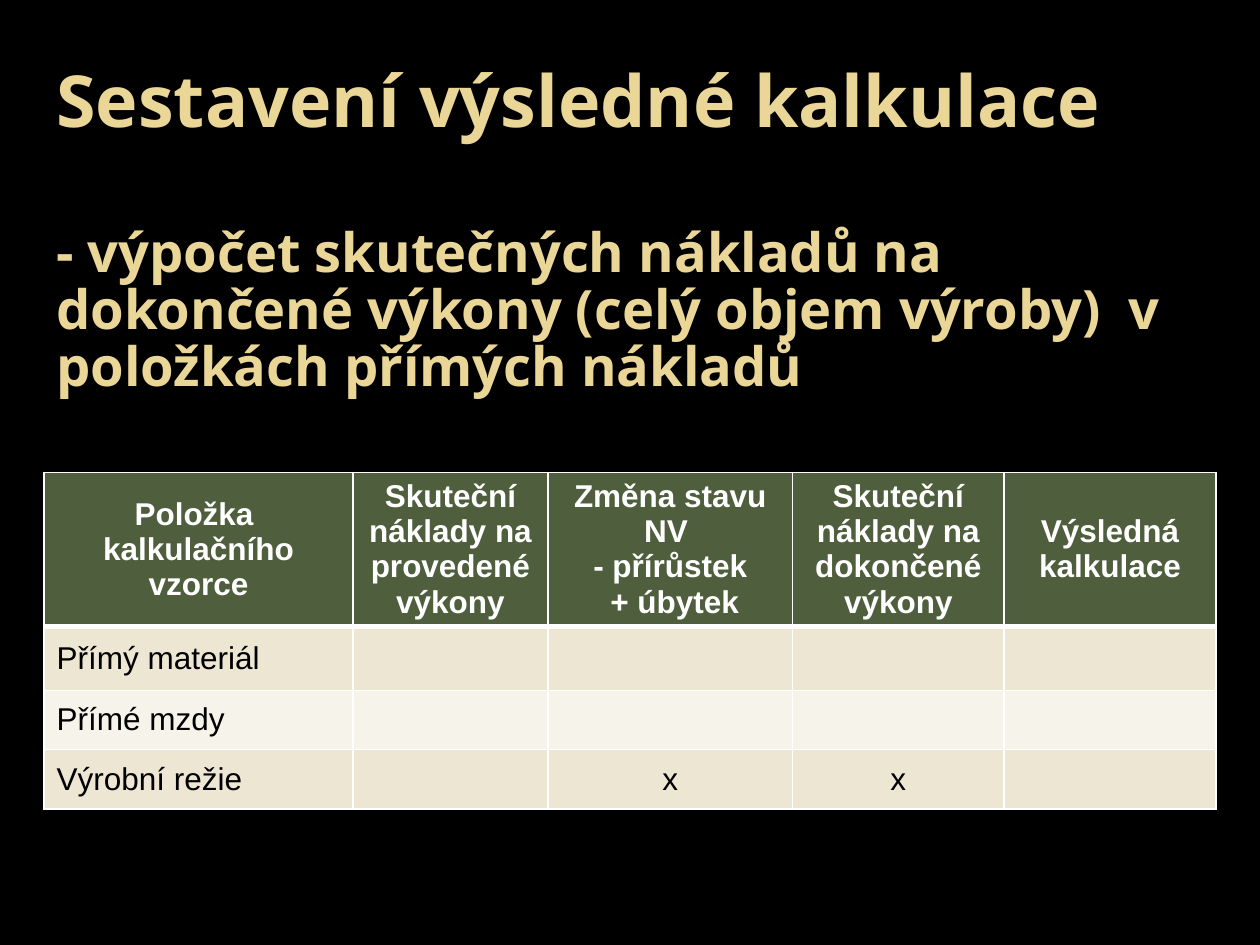
from lxml import etree
from pptx import Presentation
from pptx import util as u
from pptx.dml.color import RGBColor
from pptx.enum import text
from pptx.oxml import ns

WIDTH, HEIGHT = 10, 7.5
LEFT, CONTENT_WIDTH = 0.35, 9.29
TITLE_TOP, TITLE_HEIGHT = 0.29, 3.11
TABLE_TOP = 3.75

BLACK, WHITE, GOLD = "000000", "FFFFFF", "EAD696"
HEADER_FILL = "4F5E3C"
BAND_FILLS = ["EDE6D3", "F6F3EA"]

# wording, size, space before
HEADING = [
    ("Sestavení výsledné kalkulace", 41, 0),
    ("- výpočet skutečných nákladů na dokončené výkony (celý objem výroby)  v "
     "položkách přímých nákladů", 31, 48),
]
COLUMN_WIDTHS = [2.45, 1.55, 1.94, 1.68, 1.68]
ROW_HEIGHTS = [0.83, 0.51, 0.47, 0.47]
ROWS = [
    ["Položka \nkalkulačního vzorce",
     "Skuteční náklady na provedené výkony",
     "Změna stavu NV \n- přírůstek\n + úbytek",
     "Skuteční náklady na dokončené výkony",
     "Výsledná kalkulace"],
    ["Přímý materiál", "", "", "", ""],
    ["Přímé mzdy", "", "", "", ""],
    ["Výrobní režie", "", "x", "x", ""],
]


def color(value):
    return RGBColor.from_string(value)


def add_span(para, words, font, size, ink, bold):
    span = para.add_run()
    span.text = words
    span.font.name = font
    span.font.size = u.Pt(size)
    span.font.bold = bold
    span.font.color.rgb = color(ink)


def add_border(cell, side, points):
    properties = cell._tc.get_or_add_tcPr()
    line = etree.SubElement(properties, ns.qn(f"a:ln{side}"), w=str(u.Pt(points)))
    fill = etree.SubElement(line, ns.qn("a:solidFill"))
    etree.SubElement(fill, ns.qn("a:srgbClr"), val=WHITE)


def add_heading(page):
    box = page.shapes.add_textbox(u.Inches(LEFT), u.Inches(TITLE_TOP),
                                  u.Inches(CONTENT_WIDTH), u.Inches(TITLE_HEIGHT))
    frame = box.text_frame
    frame.word_wrap = True
    frame.vertical_anchor = text.MSO_ANCHOR.MIDDLE
    for index, (words, size, gap) in enumerate(HEADING):
        para = frame.add_paragraph() if index else frame.paragraphs[0]
        para.line_spacing = 0.88
        para.space_before = u.Pt(gap)
        add_span(para, words, "Open Sans", size, GOLD, True)


def fill_cell(cell, words, row, column):
    header = row == 0
    # Borders come before the fill in the cell properties.
    for side in "LRTB":
        thick = (header and side == "B") or (row == 1 and side == "T")
        add_border(cell, side, 3 if thick else 1)
    cell.fill.solid()
    cell.fill.fore_color.rgb = color(HEADER_FILL if header else BAND_FILLS[(row - 1) % 2])
    cell.vertical_anchor = text.MSO_ANCHOR.MIDDLE
    if not words:
        return
    for index, line in enumerate(words.split("\n")):
        frame = cell.text_frame
        para = frame.add_paragraph() if index else frame.paragraphs[0]
        if header or column:
            para.alignment = text.PP_ALIGN.CENTER
        add_span(para, line, "Arial", 18, WHITE if header else BLACK, header)


def add_cost_table(page):
    table = page.shapes.add_table(
        len(ROWS), len(COLUMN_WIDTHS), u.Inches(LEFT), u.Inches(TABLE_TOP),
        u.Inches(CONTENT_WIDTH), u.Inches(sum(ROW_HEIGHTS))).table
    for column, width in zip(table.columns, COLUMN_WIDTHS):
        column.width = u.Inches(width)
    for row, height in zip(table.rows, ROW_HEIGHTS):
        row.height = u.Inches(height)
    for row, entries in enumerate(ROWS):
        for column, words in enumerate(entries):
            fill_cell(table.cell(row, column), words, row, column)


def main():
    deck = Presentation()
    deck.slide_width, deck.slide_height = u.Inches(WIDTH), u.Inches(HEIGHT)
    page = deck.slides.add_slide(deck.slide_layouts[6])
    page.background.fill.solid()
    page.background.fill.fore_color.rgb = color(BLACK)
    add_cost_table(page)
    add_heading(page)
    deck.save("out.pptx")


if __name__ == "__main__":
    main()
